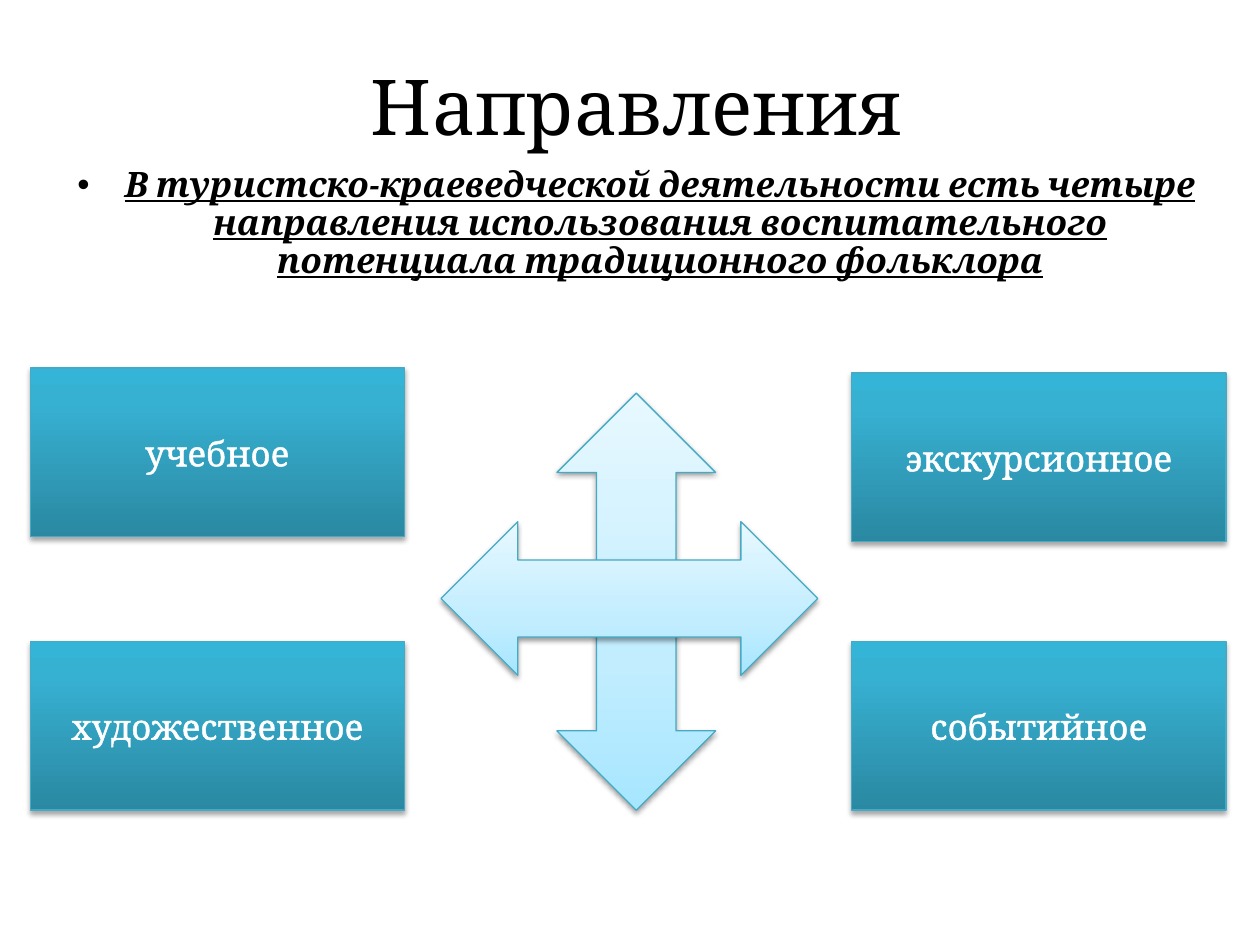
from copy import deepcopy
from lxml.etree import SubElement
from pptx import Presentation
from pptx.dml.color import RGBColor
from pptx.enum.shapes import MSO_SHAPE as Shape
from pptx.enum.text import MSO_ANCHOR as Anchor, MSO_AUTO_SIZE as Fit, PP_ALIGN as Align
from pptx.oxml.ns import qn
from pptx.util import Inches, Pt

BLACK = RGBColor(0, 0, 0)
WHITE = RGBColor(255, 255, 255)
EDGE = RGBColor(0x46, 0xAA, 0xC5)
DEEP = [(0, RGBColor(0x2A, 0x88, 0xA2)), (0.8, RGBColor(0x37, 0xB1, 0xD2)),
        (1, RGBColor(0x34, 0xB4, 0xD6))]
PALE = [(0, RGBColor(0xA7, 0xE6, 0xFF)), (0.35, RGBColor(0xC1, 0xED, 0xFF)),
        (1, RGBColor(0xE7, 0xF8, 0xFF))]

LEFT, RIGHT = 0.24, 6.76
LOW = 5.09
BOXES = [("учебное", LEFT, 2.92), ("экскурсионное", RIGHT, 2.96),
         ("событийное", RIGHT, LOW), ("художественное", LEFT, LOW)]


class Page:
    font = "Cambria"

    def __init__(self, slide):
        self.slide = slide

    def label(self, frame, text, size, color):
        frame.text = text
        frame.word_wrap = True
        para = frame.paragraphs[0]
        para.alignment = Align.CENTER
        run = para.runs[0]
        run.font.name = self.font
        run.font.size = Pt(size)
        run.font.color.rgb = color
        return para, run

    def fill_holder(self, index, area, text, size):
        holder = self.slide.placeholders[index]
        holder.left, holder.top, holder.width, holder.height = map(Inches, area)
        frame = holder.text_frame
        frame.auto_size = Fit.NONE
        return self.label(frame, text, size, BLACK)

    def title(self, area, text):
        self.fill_holder(0, area, text, 44)

    def body(self, area, text):
        para, run = self.fill_holder(1, area, text, 20)
        para.space_before = Pt(0)
        para.line_spacing = 0.9
        run.font.bold = run.font.italic = run.font.underline = True

    def shape(self, kind, area, stops, alpha, drop):
        """Add a shape with an upward gradient and a soft shadow below."""
        shape = self.slide.shapes.add_shape(kind, *map(Inches, area))
        shape.fill.gradient()
        shape.fill.gradient_angle = 90
        props = shape.element.spPr
        grades = props.find(".//" + qn("a:gsLst"))
        grades.append(deepcopy(grades[-1]))
        for stop, (place, color) in zip(shape.fill.gradient_stops, stops):
            stop.position = place
            stop.color.rgb = color
        shape.line.color.rgb = EDGE
        shape.line.width = Pt(0.75)
        shape.shadow.inherit = False
        shade = SubElement(props.find(qn("a:effectLst")), qn("a:outerShdw"),
                           blurRad=str(Pt(3.1)), dist=str(Pt(drop)),
                           dir="5400000", rotWithShape="0")
        tint = SubElement(shade, qn("a:srgbClr"), val=str(BLACK))
        SubElement(tint, qn("a:alpha"), val=str(alpha * 1000))
        return shape

    def box(self, text, left, top):
        shape = self.shape(Shape.RECTANGLE, (left, top, 2.97, 1.34), DEEP, 35, 1.8)
        frame = shape.text_frame
        frame.vertical_anchor = Anchor.MIDDLE
        _, run = self.label(frame, text, 20, WHITE)
        props = run.font._element
        line = SubElement(props, qn("a:ln"), w=str(Pt(1.45)))
        SubElement(SubElement(line, qn("a:solidFill")), qn("a:srgbClr"), val=str(WHITE))
        props.insert(0, line)

    def arrow(self, kind, area):
        self.shape(kind, area, PALE, 38, 1.6)


def main():
    deck = Presentation()
    deck.slide_width, deck.slide_height = Inches(10), Inches(7.5)
    page = Page(deck.slides.add_slide(deck.slide_layouts[1]))
    page.title((0.55, 0.36, 9, 0.94), "Направления")
    page.body((0.37, 1.28, 9.36, 1.26),
              "В туристско-краеведческой деятельности есть четыре направления "
              "использования воспитательного потенциала традиционного фольклора")
    for text, left, top in BOXES:
        page.box(text, left, top)
    page.arrow(Shape.UP_DOWN_ARROW, (4.42, 3.12, 1.26, 3.31))
    page.arrow(Shape.LEFT_RIGHT_ARROW, (3.5, 4.14, 2.99, 1.22))
    deck.save("out.pptx")


if __name__ == "__main__":
    main()
